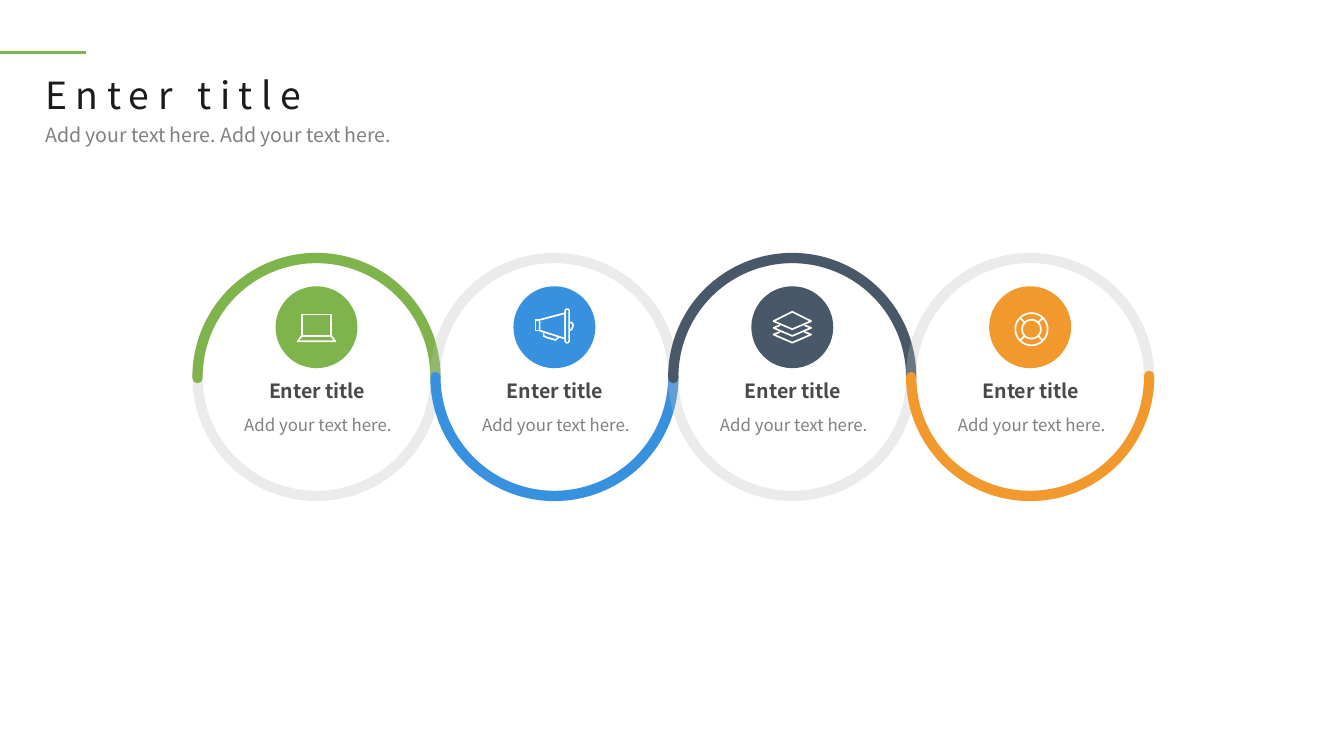
from dataclasses import dataclass
from math import cos, pi, sin

from lxml.etree import SubElement
from pptx import Presentation
from pptx.dml.color import RGBColor
from pptx.enum.shapes import MSO_CONNECTOR, MSO_SHAPE
from pptx.enum.text import MSO_AUTO_SIZE, PP_ALIGN
from pptx.oxml.ns import qn
from pptx.util import Inches, Pt


@dataclass(frozen=True)
class Theme:
    font: str = "Noto Sans CJK JP"
    title: str = "1B1B1B"
    heading: str = "494949"
    body: str = "808080"
    ring: str = "BFBFBF"
    white: str = "FFFFFF"
    green: str = "7FB34C"
    blue: str = "3891DE"
    slate: str = "485868"
    orange: str = "F1992D"
    title_size: float = 20
    heading_size: float = 10.5
    body_size: float = 9
    ring_width: float = 5.5
    icon_width: float = 0.9


THEME = Theme()
SLIDE_WIDTH = 10
SLIDE_HEIGHT = SLIDE_WIDTH * 9 / 16
STEP_SIZE = 1.77


def box(left, top, width, height):
    return [Inches(length) for length in (left, top, width, height)]


def circle(radius, x, y, segments=40):
    angles = [2 * pi * step / segments for step in range(segments)]
    return [(x + radius * cos(a), y + radius * sin(a)) for a in angles], True


def spoke(angle, x, y, inner, outer):
    return [(x + r * cos(angle), y + r * sin(angle)) for r in (inner, outer)], False


def layer(y):
    return [(-0.09, y - 0.02), (-0.14, y), (0, y + 0.06), (0.14, y), (0.09, y - 0.02)], False


# Each icon is a list of (points, closed), in inches from the centre of its disc.
LAPTOP = [
    ([(-0.11, -0.1), (0.11, -0.1), (0.11, 0.06), (-0.11, 0.06)], True),
    ([(-0.11, 0.06), (0.11, 0.06), (0.14, 0.1), (-0.14, 0.1)], True),
]
MEGAPHONE = [
    ([(-0.11, -0.06), (0.08, -0.11), (0.08, 0.08), (-0.11, 0.02)], True),
    ([(0.08, -0.13), (0.09, -0.14), (0.1, -0.14), (0.11, -0.13),
      (0.11, 0.1), (0.1, 0.11), (0.09, 0.11), (0.08, 0.1)], True),
    ([(-0.14, -0.06), (-0.11, -0.06), (-0.11, 0.02), (-0.14, 0.02)], True),
    ([(-0.08, 0.04), (-0.08, 0.06), (-0.06, 0.07), (0.01, 0.09), (0.03, 0.07)], False),
    ([(0.11, -0.04), (0.13, -0.04), (0.14, -0.02), (0.13, 0.01), (0.11, 0.02)], False),
]
LAYERS = [
    ([(-0.14, -0.05), (0, -0.12), (0.14, -0.05), (0, 0.01)], True),
    layer(0),
    layer(0.05),
]
LIFEBUOY = [circle(radius, 0.01, 0.01) for radius in (0.07, 0.12)] + [
    spoke(pi / 4 + quarter * pi / 2, 0.01, 0.01, 0.07, 0.12) for quarter in range(4)
]

STEPS = [
    (THEME.green, LAPTOP),
    (THEME.blue, MEGAPHONE),
    (THEME.slate, LAYERS),
    (THEME.orange, LIFEBUOY),
]


def add_text(slide, area, text, size, color, bold=False, align=PP_ALIGN.LEFT,
             line_spacing=None, margins=True, wrap=True, letter_spacing=None):
    shape = slide.shapes.add_textbox(*box(*area))
    frame = shape.text_frame
    frame.text = text
    frame.word_wrap = wrap
    frame.auto_size = MSO_AUTO_SIZE.SHAPE_TO_FIT_TEXT
    if not margins:
        frame.margin_left = frame.margin_right = frame.margin_top = frame.margin_bottom = 0
    paragraph = frame.paragraphs[0]
    paragraph.alignment = align
    paragraph.line_spacing = line_spacing
    run = paragraph.runs[0]
    run.font.name = THEME.font
    run.font.size = Pt(size)
    run.font.bold = bold
    run.font.color.rgb = RGBColor.from_string(color)
    if letter_spacing:
        run.font._element.set("spc", str(int(letter_spacing * 100)))


def style_outline(shape, color, width):
    shape.shadow.inherit = False
    shape.fill.background()
    shape.line.color.rgb = RGBColor.from_string(color)
    shape.line.width = Pt(width)


def add_ring(slide, area):
    ring = slide.shapes.add_shape(MSO_SHAPE.OVAL, *box(*area))
    style_outline(ring, THEME.ring, THEME.ring_width)
    color = ring.line._ln.find(".//" + qn("a:srgbClr"))
    SubElement(color, qn("a:alpha"), val="30000")


def add_half_ring(slide, area, color, lower):
    arc = slide.shapes.add_shape(MSO_SHAPE.ARC, *box(*area))
    arc.adjustments[0] = 107.66
    arc.adjustments[1] = 0
    arc.rotation = 180 if lower else 0
    style_outline(arc, color, THEME.ring_width)
    arc.line._ln.set("cap", "rnd")


def add_icon(slide, x, y, contours):
    """Draw all contours as one outline around the centre x, y."""
    builder = None
    for points, closed in contours:
        placed = [(Inches(x + dx), Inches(y + dy)) for dx, dy in points]
        if builder is None:
            builder = slide.shapes.build_freeform(*placed[0])
        else:
            builder.move_to(*placed[0])
        builder.add_line_segments(placed[1:], close=closed)
    style_outline(builder.convert_to_shape(), THEME.white, THEME.icon_width)


def add_step(slide, left, top, color, icon, lower):
    area = (left, top, STEP_SIZE, STEP_SIZE)
    add_ring(slide, area)
    add_half_ring(slide, area, color, lower)

    disc = slide.shapes.add_shape(MSO_SHAPE.OVAL, *box(left + 0.58, top + 0.21, 0.61, 0.61))
    disc.shadow.inherit = False
    disc.fill.solid()
    disc.fill.fore_color.rgb = RGBColor.from_string(color)
    disc.line.fill.background()
    add_icon(slide, left + STEP_SIZE / 2, top + 0.52, icon)

    add_text(slide, (left + 0.33, top + 0.9, 1.12, 0.18), "Enter title",
             THEME.heading_size, THEME.heading, bold=True,
             align=PP_ALIGN.CENTER, margins=False)
    add_text(slide, (left + 0.23, top + 1.04, 1.33, 0.55), "Add your text here.",
             THEME.body_size, THEME.body, align=PP_ALIGN.CENTER, line_spacing=1.5)


def add_header(slide, left, top):
    accent = slide.shapes.add_connector(
        MSO_CONNECTOR.STRAIGHT, Inches(left), Inches(top), Inches(left + 0.64), Inches(top))
    accent.line.color.rgb = RGBColor.from_string(THEME.green)
    accent.line.width = Pt(2)
    SubElement(accent._element.spPr, qn("a:effectLst"))
    add_text(slide, (left + 0.24, top + 0.16, 2.24, 0.37), "Enter title",
             THEME.title_size, THEME.title, line_spacing=0.8, wrap=False, letter_spacing=4.5)
    add_text(slide, (left + 0.24, top + 0.51, 4.23, 0.24),
             "Add your text here. Add your text here.",
             THEME.heading_size, THEME.body, line_spacing=0.8)


def main():
    presentation = Presentation()
    presentation.slide_width = Inches(SLIDE_WIDTH)
    presentation.slide_height = Inches(SLIDE_HEIGHT)
    slide = presentation.slides.add_slide(presentation.slide_layouts[6])
    for index, (color, icon) in enumerate(STEPS):
        add_step(slide, 1.47 + index * STEP_SIZE, 1.92, color, icon, lower=index % 2 == 1)
    add_header(slide, 0, 0.39)
    presentation.save("out.pptx")


if __name__ == "__main__":
    main()
